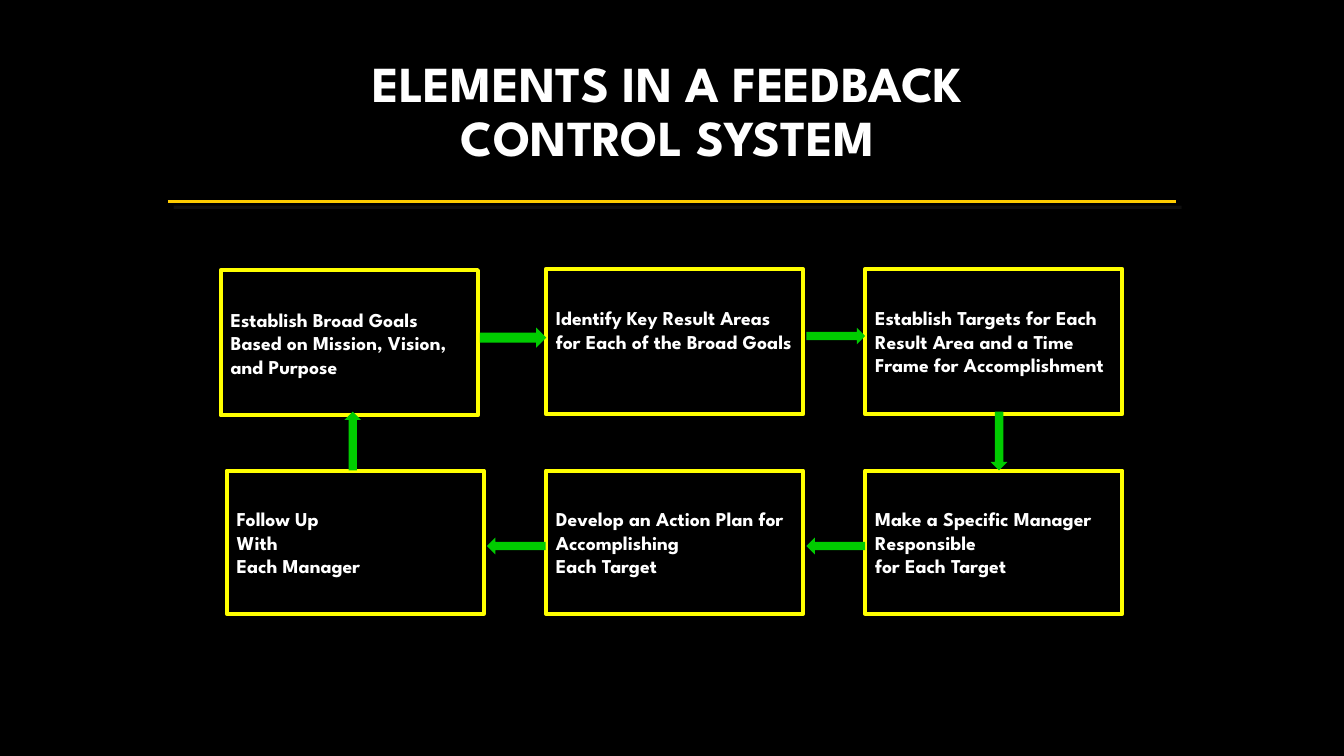
from dataclasses import dataclass

from lxml import etree
from pptx import Presentation
from pptx.dml.color import RGBColor
from pptx.enum.shapes import MSO_CONNECTOR, MSO_SHAPE
from pptx.enum.text import MSO_ANCHOR, MSO_AUTO_SIZE, PP_ALIGN
from pptx.oxml import parse_xml
from pptx.oxml.ns import nsdecls
from pptx.util import Pt


@dataclass(frozen=True)
class Theme:
    font: str = "League Spartan"
    back: RGBColor = RGBColor(0, 0, 0)
    text: RGBColor = RGBColor(255, 255, 255)
    rule: RGBColor = RGBColor(255, 204, 0)
    box: RGBColor = RGBColor(255, 255, 0)
    arrow: RGBColor = RGBColor(0, 204, 0)
    shade: str = "1C1C1C"
    title_size: int = 36
    body_size: int = 14


TITLE = "ELEMENTS IN A FEEDBACK CONTROL SYSTEM"
COLS = (162, 390, 618)
BOX_W = 183.6
TOP_Y, TOP_H = 192.2, 103.7
LOW_Y, LOW_H = 336.2, 102.2
BLANK_LINE = 16.8

STEPS = [
    (COLS[0] - 4.3, TOP_Y + 0.8, TOP_H, 0,
     "Establish Broad Goals Based on Mission, Vision,\nand Purpose"),
    (COLS[1], TOP_Y, TOP_H, BLANK_LINE,
     "Identify Key Result Areas for Each of the Broad Goals"),
    (COLS[2], TOP_Y, TOP_H, 0,
     "Establish Targets for Each Result Area and a Time Frame for Accomplishment"),
    (COLS[2], LOW_Y, LOW_H, 0,
     "Make a Specific Manager\nResponsible\nfor Each Target"),
    (COLS[1], LOW_Y, LOW_H, 0,
     "Develop an Action Plan for Accomplishing\nEach Target"),
    (COLS[0], LOW_Y, LOW_H, 0, "Follow Up\nWith\nEach Manager"),
]

SHORT, LONG = (42, 12), (47.5, 14.4)
ARROWS = [
    (366.5, 241.2, LONG, 0),
    (597, 240, SHORT, 0),
    (713.6, 315, SHORT, 90),
    (597, 390, SHORT, 180),
    (368.8, 390, SHORT, 180),
    (252, 315, SHORT, 270),
]

T = Theme()


def style(tf, size, align):
    tf.word_wrap = True
    tf.auto_size = MSO_AUTO_SIZE.NONE
    tf.vertical_anchor = MSO_ANCHOR.MIDDLE
    for p in tf.paragraphs:
        p.alignment = align
        for r in p.runs:
            r.font.name, r.font.size, r.font.bold = T.font, Pt(size), True
            r.font.color.rgb = T.text


def add_title(s):
    sp = s.shapes.title
    sp.left, sp.top, sp.width, sp.height = Pt(216), Pt(36), Pt(522), Pt(90)
    sp.text_frame.text = TITLE
    style(sp.text_frame, T.title_size, PP_ALIGN.CENTER)
    sp.text_frame.paragraphs[0].line_spacing = 0.9


def add_rule(s):
    ln = s.shapes.add_connector(MSO_CONNECTOR.STRAIGHT, Pt(120), Pt(144), Pt(840), Pt(144))
    ln.line.color.rgb, ln.line.width = T.rule, Pt(2.25)
    effects = parse_xml(f"<a:effectLst {nsdecls('a')}/>")
    shadow = etree.SubElement(effects, effects.tag.replace("effectLst", "outerShdw"),
                              dist=str(Pt(5.7)), dir="2700000", algn="ctr", rotWithShape="0")
    shadow.append(parse_xml(
        f'<a:srgbClr {nsdecls("a")} val="{T.shade}"><a:alpha val="50000"/></a:srgbClr>'))
    ln._element.spPr.append(effects)


def add_step(s, x, y, h, spare, text):
    sp = s.shapes.add_shape(MSO_SHAPE.RECTANGLE, Pt(x), Pt(y), Pt(BOX_W), Pt(h))
    sp.shadow.inherit = False
    sp.fill.background()
    sp.line.color.rgb, sp.line.width = T.box, Pt(3)
    tf = sp.text_frame
    tf.text = text
    tf.margin_bottom = Pt(3.6 + spare)
    style(tf, T.body_size, PP_ALIGN.LEFT)


def add_arrow(s, cx, cy, size, angle):
    w, h = size
    sp = s.shapes.add_shape(MSO_SHAPE.RIGHT_ARROW, Pt(cx - w / 2), Pt(cy - h / 2), Pt(w), Pt(h))
    sp.shadow.inherit = False
    sp.rotation = angle
    sp.fill.solid()
    sp.fill.fore_color.rgb = T.arrow
    sp.line.fill.background()


def main():
    prs = Presentation()
    prs.slide_width, prs.slide_height = Pt(960), Pt(540)
    s = prs.slides.add_slide(prs.slide_layouts[5])
    s.background.fill.solid()
    s.background.fill.fore_color.rgb = T.back
    add_title(s)
    add_rule(s)
    for step in STEPS:
        add_step(s, *step)
    for arrow in ARROWS:
        add_arrow(s, *arrow)
    prs.save("out.pptx")


if __name__ == "__main__":
    main()
